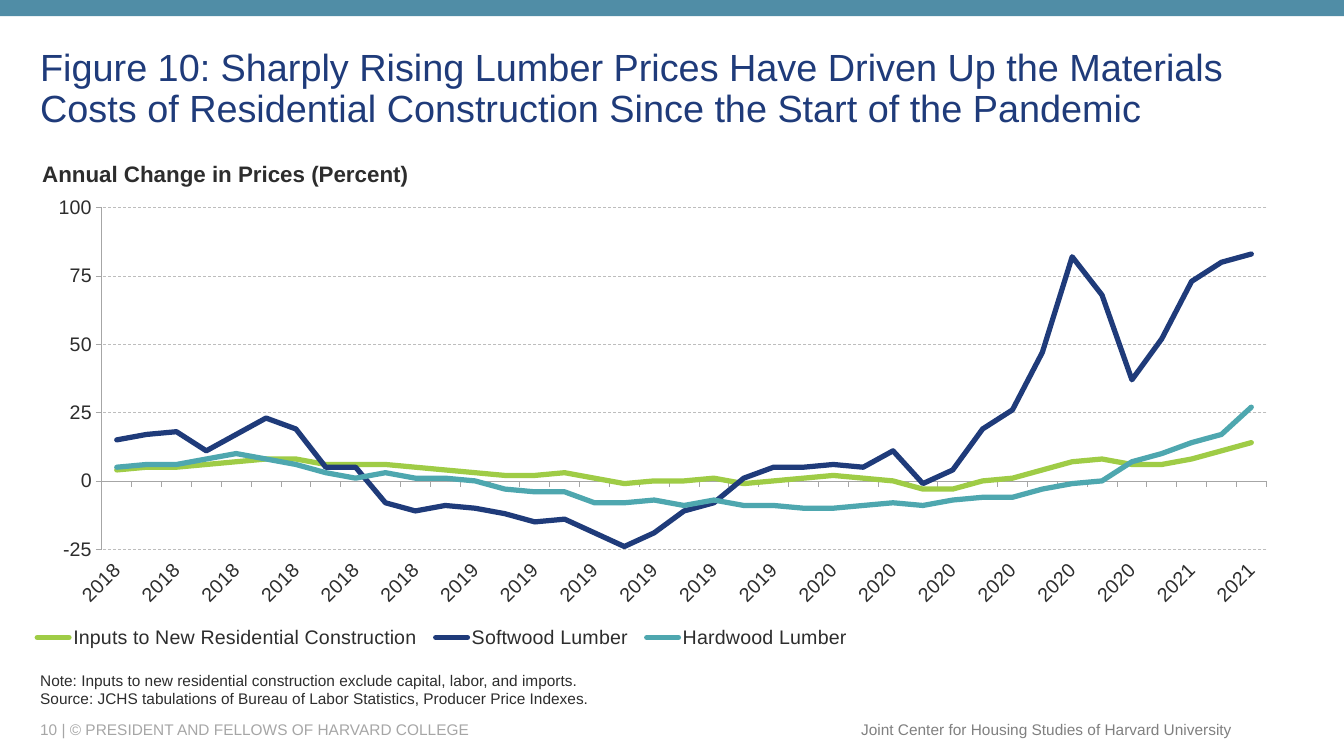
from lxml import etree
from pptx import Presentation, util as u
from pptx.chart.data import CategoryChartData
from pptx.dml.color import RGBColor
from pptx.enum import chart as ch, dml, shapes, text
from pptx.oxml.ns import qn

# Content
NAVY, GREEN, TEAL, INK, AXIS = "1F3B7A", "9FCC46", "4EA7AF", "2D2D2D", "A6A6A6"
BAND = "508DA6"
MID, TOP, BOTTOM = (text.MSO_ANCHOR.MIDDLE, text.MSO_ANCHOR.TOP,
                    text.MSO_ANCHOR.BOTTOM)
LEFT, RIGHT = text.PP_ALIGN.LEFT, text.PP_ALIGN.RIGHT

# lines, box, size, colour, bold, anchor, alignment, line spacing
TEXTS = [
    (["10 | © PRESIDENT AND FELLOWS OF HARVARD COLLEGE"],
     (0.3, 7.14, 7.92, 0.2), 11, AXIS, False, MID, LEFT, 1.0),
    (["Joint Center for Housing Studies of Harvard University"],
     (8.42, 7.09, 3.9, 0.29), 11, "808080", False, MID, RIGHT, 1.0),
    (["Figure 10: Sharply Rising Lumber Prices Have Driven Up the Materials "
      "Costs of Residential Construction Since the Start of the Pandemic"],
     (0.3, 0.41, 12.65, 0.97), 27, NAVY, False, MID, LEFT, 0.9),
    (["Note: Inputs to new residential construction exclude capital, labor, "
      "and imports.",
      "Source: JCHS tabulations of Bureau of Labor Statistics, Producer Price "
      "Indexes."],
     (0.3, 6.49, 11.75, 0.58), 11, INK, False, BOTTOM, LEFT, 1.0),
    (["Annual Change in Prices (Percent)"],
     (0.32, 1.54, 4.6, 0.37), 16, INK, True, TOP, LEFT, 1.0),
]

MONTHS = {"2018": 12, "2019": 12, "2020": 12, "2021": 3}
SERIES = [
    ("Inputs to New Residential Construction", GREEN,
     (4, 5, 5, 6, 7, 8, 8, 6, 6, 6, 5, 4,
      3, 2, 2, 3, 1, -1, 0, 0, 1, -1, 0, 1,
      2, 1, 0, -3, -3, 0, 1, 4, 7, 8, 6, 6,
      8, 11, 14)),
    ("Softwood Lumber", NAVY,
     (15, 17, 18, 11, 17, 23, 19, 5, 5, -8, -11, -9,
      -10, -12, -15, -14, -19, -24, -19, -11, -8, 1, 5, 5,
      6, 5, 11, -1, 4, 19, 26, 47, 82, 68, 37, 52,
      73, 80, 83)),
    ("Hardwood Lumber", TEAL,
     (5, 6, 6, 8, 10, 8, 6, 3, 1, 3, 1, 1,
      0, -3, -4, -4, -8, -8, -7, -9, -7, -9, -9, -10,
      -10, -9, -8, -9, -7, -6, -6, -3, -1, 0, 7, 10,
      14, 17, 27)),
]
# Boxes on the slide, in inches
CHART_BOX = (0.25, 1.95, 12.83, 4.53)
PLOT_BOX = (1.01, 2.06, 11.55, 3.39)
LEGEND_BOX = (0.25, 6.17, 8.27, 0.32)


def rgb(value):
    return RGBColor.from_string(value)


def inches(box):
    return [u.Inches(v) for v in box]


def set_format(target, values):
    for name, value in values.items():
        setattr(target, name, value)


def set_font(font, size, color, bold=False):
    set_format(font, {"name": "Arial", "size": u.Pt(size), "bold": bold})
    font.color.rgb = rgb(color)


def set_line(line, color, width):
    line.color.rgb = rgb(color)
    line.width = u.Pt(width)


def add_text(s, lines, box, size, color, bold, anchor, align, spacing):
    tf = s.shapes.add_textbox(*inches(box)).text_frame
    set_format(tf, {"word_wrap": True, "vertical_anchor": anchor})
    for i, line in enumerate(lines):
        p = tf.paragraphs[0] if i == 0 else tf.add_paragraph()
        set_format(p, {"alignment": align, "line_spacing": spacing})
        r = p.add_run()
        r.text = line
        set_font(r.font, size, color, bold)


def c_node(tag, val):
    node = etree.Element(qn("c:" + tag))
    node.set("val", str(val))
    return node


def set_layout(parent, index, box, inner=False):
    """Place a chart part, turning its slide box into chart fractions."""
    for old in parent.findall(qn("c:layout")):
        parent.remove(old)
    layout = etree.Element(qn("c:layout"))
    manual = etree.SubElement(layout, qn("c:manualLayout"))
    if inner:
        manual.append(c_node("layoutTarget", "inner"))
    for tag in ("xMode", "yMode"):
        manual.append(c_node(tag, "edge"))
    left, top, width, height = CHART_BOX
    x, y, w, h = box
    fractions = ((x - left) / width, (y - top) / height, w / width, h / height)
    for tag, val in zip("xywh", fractions):
        manual.append(c_node(tag, val))
    parent.insert(index, layout)


def add_price_chart(s):
    data = CategoryChartData(number_format="0")
    data.categories = [year for year, n in MONTHS.items() for _ in range(n)]
    for name, _, values in SERIES:
        data.add_series(name, values)
    chart = s.shapes.add_chart(ch.XL_CHART_TYPE.LINE, *inches(CHART_BOX),
                               data).chart
    chart.has_title = False
    set_font(chart.font, 10, "5A5A5A")

    # Lines
    chart.plots[0].vary_by_categories = False
    for series, (_, color, _) in zip(chart.plots[0].series, SERIES):
        series.smooth = False
        series.marker.style = ch.XL_MARKER_STYLE.NONE
        set_line(series.format.line, color, 3.75)
        series._element.find(".//" + qn("a:ln")).set("cap", "rnd")

    # Axes
    cat, val = chart.category_axis, chart.value_axis
    for axis in (cat, val):
        set_format(axis, {"major_tick_mark": ch.XL_TICK_MARK.OUTSIDE,
                          "minor_tick_mark": ch.XL_TICK_MARK.NONE})
        set_font(axis.tick_labels.font, 14, INK)
        set_line(axis.format.line, AXIS, 0.5)
    set_format(val, {"minimum_scale": -25, "maximum_scale": 100,
                     "major_unit": 25, "has_major_gridlines": True})
    set_format(val.tick_labels, {"number_format": "#,##0",
                                 "number_format_is_linked": False})
    grid = val.major_gridlines.format.line
    set_line(grid, "BDBDBD", 0.5)
    grid.dash_style = dml.MSO_LINE.DASH
    cat.tick_label_position = ch.XL_TICK_LABEL_POSITION.LOW
    cat_xml = cat._element
    cat_xml.find(qn("c:txPr")).find(qn("a:bodyPr")).set("rot", "-2700000")
    last = cat_xml.find(qn("c:noMultiLvlLbl"))
    for tag, step in (("tickLblSkip", 2), ("tickMarkSkip", 1)):
        last.addprevious(c_node(tag, step))

    # Legend and plot placement
    chart.has_legend = True
    set_format(chart.legend, {"position": ch.XL_LEGEND_POSITION.BOTTOM,
                              "include_in_layout": False})
    set_font(chart.legend.font, 14, INK)
    set_layout(chart.legend._element, 1, LEGEND_BOX)
    set_layout(cat_xml.getparent(), 0, PLOT_BOX, inner=True)


def main():
    prs = Presentation()
    prs.slide_width, prs.slide_height = inches((13.33, 7.5))
    s = prs.slides.add_slide(prs.slide_layouts[6])

    # Top band
    band = s.shapes.add_shape(shapes.MSO_SHAPE.RECTANGLE,
                              *inches((0, 0, 13.33, 0.16)))
    band.shadow.inherit = False
    band.fill.solid()
    band.fill.fore_color.rgb = rgb(BAND)
    band.line.fill.background()

    # Chart and text
    add_price_chart(s)
    for item in TEXTS:
        add_text(s, *item)
    prs.save("out.pptx")


if __name__ == "__main__":
    main()
